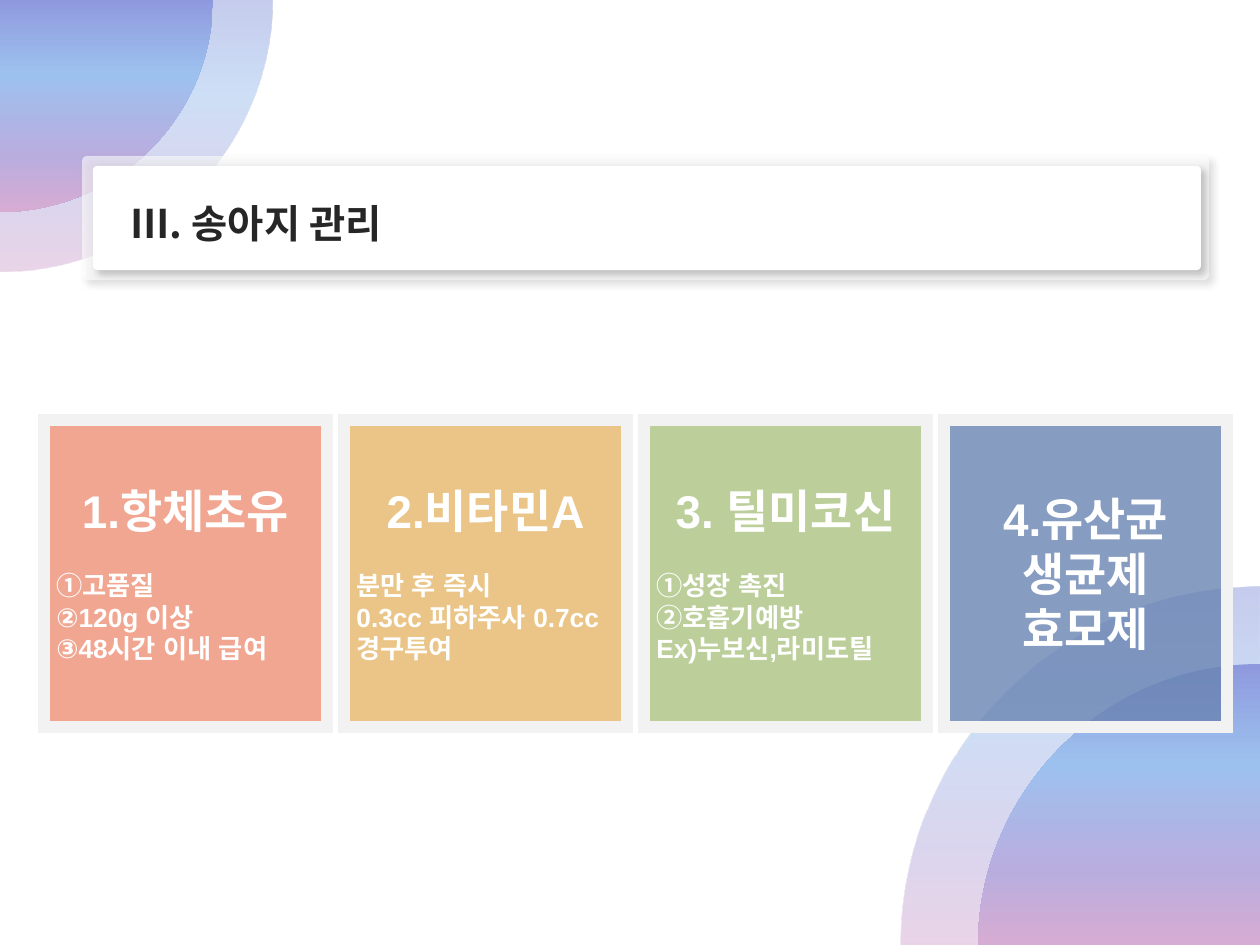
from dataclasses import dataclass

from lxml import etree
from pptx import Presentation
from pptx import util as u
from pptx.dml.color import RGBColor
from pptx.enum import shapes, text
from pptx.oxml.ns import qn

EMU_PER_PX = 914400 / 126
COLORS = {
    "white": "FFFFFF", "black": "000000", "title": "262626", "frame": "F2F2F2",
    "coral": "EE9076", "amber": "E5B769", "green": "ACC482", "blue": "6984B2",
    "violet": "8E99DD", "sky": "9DC1EF", "lilac": "B9ADDE", "pink": "D7ACD2",
}
GRADIENT = [(0, "violet"), (35, "sky"), (74, "lilac"), (100, "pink")]
ARC_HANDLE = 0.55
CARD_LEFT, CARD_TOP, CARD_WIDTH, CARD_HEIGHT, CARD_PITCH = 44, 420, 283, 307, 300


@dataclass(frozen=True)
class Quarter:
    center_x: int
    center_y: int
    radius: int
    direction: int
    opacity: int


@dataclass(frozen=True)
class Panel:
    left: int
    top: int
    width: int
    height: int
    opacity: int


@dataclass(frozen=True)
class Card:
    color: str
    headings: tuple[str, ...]
    details: tuple[str, ...] = ()


QUARTERS = [
    Quarter(1260, 946, 359, -1, 50),
    Quarter(1260, 946, 282, -1, 100),
    Quarter(0, -1, 272, 1, 50),
    Quarter(0, -1, 213, 1, 100),
]
PANELS = [Panel(82, 156, 1127, 124, 60), Panel(93, 166, 1108, 104, 100)]
CARDS = [
    Card("coral", ("1.항체초유",), ("①고품질", "②120g 이상", "③48시간 이내 급여")),
    Card("amber", ("2.비타민A",), ("분만 후 즉시", "0.3cc 피하주사 0.7cc 경구투여")),
    Card("green", ("3. 틸미코신",), ("①성장 촉진", "②호흡기예방", "Ex)누보신,라미도틸")),
    Card("blue", ("4.유산균", "생균제", "효모제")),
]


def px(value: float) -> int:
    return round(value * EMU_PER_PX)


def child(parent, tag: str, **attributes):
    return etree.SubElement(parent, qn(tag), {k: str(v) for k, v in attributes.items()})


def add_color(parent, color: str, opacity: int) -> None:
    element = child(parent, "a:srgbClr", val=COLORS[color])
    if opacity < 100:
        child(element, "a:alpha", val=opacity * 1000)


def fill_solid(shape, color: str, opacity: int) -> None:
    shape.fill.solid()
    shape.fill.fore_color.rgb = RGBColor.from_string(COLORS[color])
    if opacity < 100:
        element = shape._element.spPr.find(qn("a:solidFill")).find(qn("a:srgbClr"))
        child(element, "a:alpha", val=opacity * 1000)


def fill_gradient(shape, opacity: int) -> None:
    shape.fill.gradient()
    gradient = shape._element.spPr.find(qn("a:gradFill"))
    for element in list(gradient):
        gradient.remove(element)
    stops = child(gradient, "a:gsLst")
    for position, color in GRADIENT:
        add_color(child(stops, "a:gs", pos=position * 1000), color, opacity)
    child(gradient, "a:lin", ang=90 * 60000, scaled=0)


def add_shadow(shape) -> None:
    effects = shape._element.spPr.find(qn("a:effectLst"))
    shadow = child(effects, "a:outerShdw", blurRad=u.Pt(4), dist=u.Pt(3),
                   dir=45 * 60000, algn="tl", rotWithShape=0)
    add_color(shadow, "black", 20)


def write(paragraph, content: str, *, size: float, color: str = "white", font: str = "Arial",
          align=text.PP_ALIGN.LEFT, before: float = 0) -> None:
    paragraph.alignment = align
    paragraph.space_before = u.Pt(before)
    run = paragraph.add_run()
    run.text = content
    run.font.size = u.Pt(size)
    run.font.bold = True
    run.font.name = font
    run.font.color.rgb = RGBColor.from_string(COLORS[color])
    child(run._r.get_or_add_rPr(), "a:ea", typeface=font)


def bend_last_segment(shape) -> None:
    center, start, end = [(int(point.get("x")), int(point.get("y")))
                          for point in shape._element.spPr.iter(qn("a:pt"))]
    line = list(shape._element.spPr.iter(qn("a:lnTo")))[-1]
    curve = etree.Element(qn("a:cubicBezTo"))
    for anchor, other in ((start, end), (end, start)):
        x, y = (round(a + ARC_HANDLE * (o - c)) for a, o, c in zip(anchor, other, center))
        child(curve, "a:pt", x=x, y=y)
    child(curve, "a:pt", x=end[0], y=end[1])
    line.getparent().replace(line, curve)


def draw_quarter(slide, quarter: Quarter) -> None:
    x, y = px(quarter.center_x), px(quarter.center_y)
    reach = px(quarter.radius) * quarter.direction
    builder = slide.shapes.build_freeform(x, y)
    builder.add_line_segments([(x + reach, y), (x, y + reach)], close=True)
    shape = builder.convert_to_shape()
    bend_last_segment(shape)
    shape.shadow.inherit = False
    shape.line.fill.background()
    fill_gradient(shape, quarter.opacity)


def draw_panel(slide, panel: Panel) -> None:
    shape = slide.shapes.add_shape(shapes.MSO_SHAPE.ROUNDED_RECTANGLE, px(panel.left),
                                   px(panel.top), px(panel.width), px(panel.height))
    shape.adjustments[0] = 0.04
    shape.shadow.inherit = False
    shape.line.fill.background()
    fill_solid(shape, "white", panel.opacity)
    add_shadow(shape)


def draw_title(slide) -> None:
    shape = slide.shapes.add_textbox(px(118), px(193), px(1060), px(60))
    shape.text_frame.word_wrap = True
    shape.text_frame.auto_size = text.MSO_AUTO_SIZE.SHAPE_TO_FIT_TEXT
    write(shape.text_frame.paragraphs[0], "Ⅲ. 송아지 관리", size=22.5, color="title",
          font="Noto Sans CJK KR")


def draw_card(slide, card: Card, index: int) -> None:
    shape = slide.shapes.add_shape(shapes.MSO_SHAPE.RECTANGLE, px(CARD_LEFT + index * CARD_PITCH),
                                   px(CARD_TOP), px(CARD_WIDTH), px(CARD_HEIGHT))
    shape.shadow.inherit = False
    fill_solid(shape, card.color, 80)
    shape.line.color.rgb = RGBColor.from_string(COLORS["frame"])
    shape.line.width = u.Pt(7)
    child(shape._element.spPr.find(qn("a:ln")), "a:miter", lim=800000)
    frame = shape.text_frame
    frame.word_wrap = True
    frame.vertical_anchor = text.MSO_ANCHOR.MIDDLE
    for number, heading in enumerate(card.headings):
        paragraph = frame.add_paragraph() if number else frame.paragraphs[0]
        write(paragraph, heading, size=26.2, align=text.PP_ALIGN.CENTER)
    for number, detail in enumerate(card.details):
        write(frame.add_paragraph(), detail, size=15, before=0 if number else 18)


def main() -> None:
    presentation = Presentation()
    presentation.slide_width = px(1260)
    presentation.slide_height = px(945)
    slide = presentation.slides.add_slide(presentation.slide_layouts[6])
    for quarter in QUARTERS:
        draw_quarter(slide, quarter)
    for panel in PANELS:
        draw_panel(slide, panel)
    draw_title(slide)
    for index, card in enumerate(CARDS):
        draw_card(slide, card, index)
    presentation.save("out.pptx")


if __name__ == "__main__":
    main()
